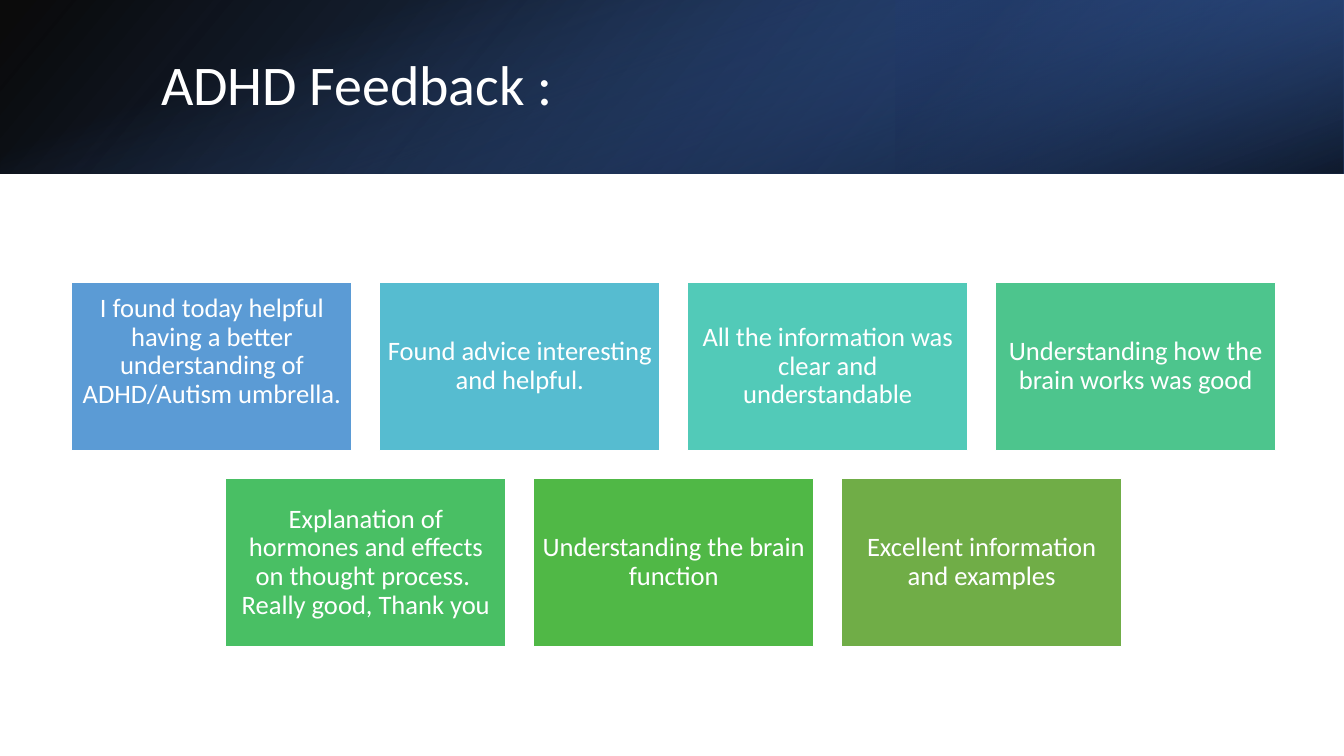
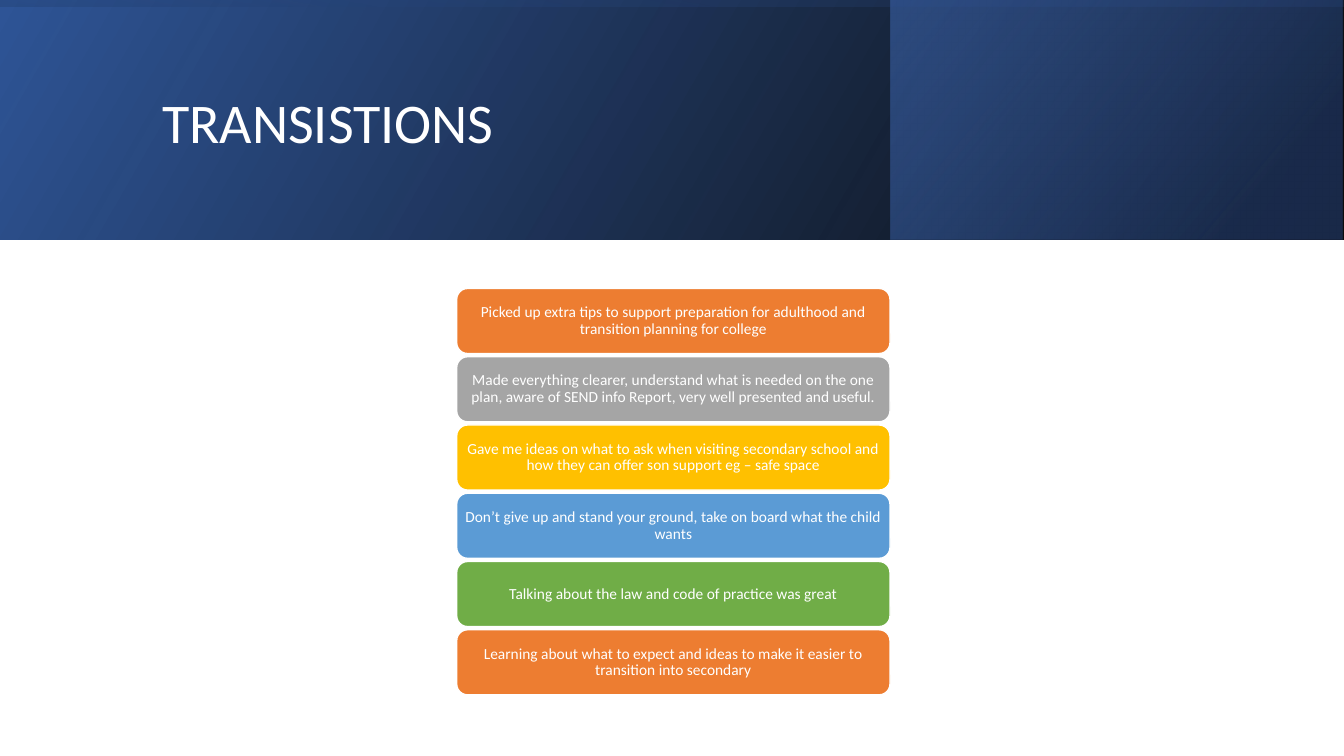
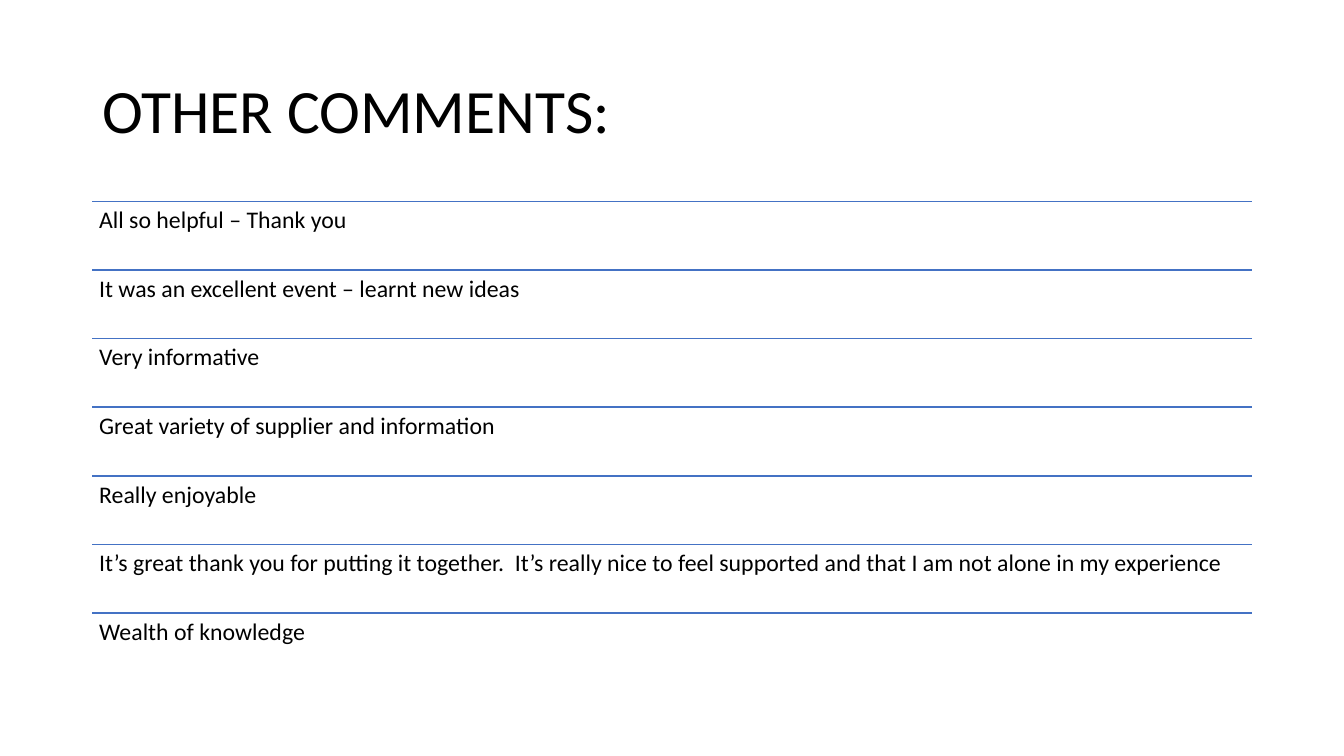
from pptx import Presentation
from pptx.dml.color import RGBColor
from pptx.enum.shapes import MSO_CONNECTOR, MSO_SHAPE
from pptx.enum.text import MSO_ANCHOR, PP_ALIGN
from pptx.oxml.ns import qn
from pptx.util import Cm, Pt
from lxml import etree

RECT = MSO_SHAPE.RECTANGLE
ROUND = MSO_SHAPE.ROUNDED_RECTANGLE
LINE = MSO_CONNECTOR.STRAIGHT
TOP, MIDDLE = MSO_ANCHOR.TOP, MSO_ANCHOR.MIDDLE
LEFT, CENTER = PP_ALIGN.LEFT, PP_ALIGN.CENTER

WIDE, HIGH = 33.87, 19.05
HUES = {
    "white": "FFFFFF", "black": "000000", "navy": "203864", "deep": "2F5597",
    "blue": "4472C4", "sky": "5B9BD5", "cyan": "56BCD0", "teal": "52CAB8",
    "mint": "4DC58D", "jade": "49BF64", "green": "50B846", "olive": "70AD47",
    "orange": "ED7D31", "gray": "A5A5A5", "gold": "FFC000",
}


def hue(name):
    return RGBColor.from_string(HUES[name])


class Deck:
    font = "Calibri"

    def __init__(self):
        self.prs = Presentation()
        self.prs.slide_width, self.prs.slide_height = Cm(WIDE), Cm(HIGH)
        self.slide = None

    def page(self):
        self.slide = self.prs.slides.add_slide(self.prs.slide_layouts[6])

    def label(self, shape, text, size, color, pads, align=LEFT, anchor=MIDDLE):
        frame = shape.text_frame
        frame.word_wrap = True
        frame.vertical_anchor = anchor
        (frame.margin_left, frame.margin_top,
         frame.margin_right, frame.margin_bottom) = map(Cm, pads)
        para = frame.paragraphs[0]
        para.alignment = align
        para.line_spacing = 0.9
        run = para.add_run()
        run.text = text
        run.font.name = self.font
        run.font.size = Pt(size)
        run.font.color.rgb = hue(color)

    def text(self, x, y, w, h, *style, **more):
        box = self.slide.shapes.add_textbox(Cm(x), Cm(y), Cm(w), Cm(h))
        self.label(box, *style, **more)

    def title(self, x, y, w, h, text, size=40, color="white"):
        self.text(x, y, w, h, text, size, color, (0.25, 0.13, 0.25, 0.13))

    def shape(self, kind, x, y, w, h):
        shape = self.slide.shapes.add_shape(kind, Cm(x), Cm(y), Cm(w), Cm(h))
        shape.shadow.inherit = False
        return shape

    def card(self, kind, x, y, w, h, fill, text, size, pads):
        card = self.shape(kind, x, y, w, h)
        card.fill.solid()
        card.fill.fore_color.rgb = hue(fill)
        card.line.color.rgb = hue("white")
        card.line.width = Pt(1)
        self.label(card, text, size, "white", pads, CENTER)

    def band(self, x, w, h, stops, angle, turn=0, flip=True):
        y = 0
        if turn % 180:
            x, y, w, h = x + (w - h) / 2, (h - w) / 2, h, w
        band = self.shape(RECT, x, y, w, h)
        band.rotation = turn
        band.line.fill.background()
        band.fill.gradient()
        band.fill.gradient_angle = 360 - angle
        props = band.element.spPr
        if flip:
            props.find(qn("a:xfrm")).set("flipH", "1")
        for stop, (place, color, _) in zip(band.fill.gradient_stops, stops):
            stop.position = place / 100
            stop.color.rgb = hue(color)
        for node, (_, _, alpha) in zip(props.iter(qn("a:srgbClr")), stops):
            etree.SubElement(node, qn("a:alpha")).set("val", str(alpha * 1000))

    def rule(self, x, y, w):
        rule = self.slide.shapes.add_connector(LINE, Cm(x), Cm(y), Cm(x + w), Cm(y))
        rule.line.color.rgb = hue("blue")
        rule.line.width = Pt(1)
        etree.SubElement(rule.element.spPr, qn("a:effectLst"))


BASE = [(0, "black", 96), (100, "deep", 100)]


def feedback(deck):
    deck.page()
    high = 4.37
    deck.band(0, WIDE, high, BASE, 140)
    deck.band(22.58, 11.29, high, [(19, "navy", 68), (100, "blue", 79)], 320, 180)
    deck.band(0, WIDE, high, [(23, "blue", 0), (99, "black", 74)], 340, 90, False)
    deck.title(3.81, 0.97, 27.89, 2.44, "ADHD Feedback :")
    pad = 0.19
    cards = [
        ("sky", "I found today helpful having a better understanding of ADHD/Autism umbrella.", 0.92),
        ("cyan", "Found advice interesting and helpful.", pad),
        ("teal", "All the information was clear and understandable", pad),
        ("mint", "Understanding how the brain works was good", pad),
        ("jade", "Explanation of hormones and effects on thought process.  Really good, Thank you", pad),
        ("green", "Understanding the brain function", pad),
        ("olive", "Excellent information and examples", pad),
    ]
    step = 7.76
    for i, (fill, text, low) in enumerate(cards):
        row, col = divmod(i, 4)
        deck.card(RECT, 1.81 + (col + row / 2) * step, 7.12 + row * 4.94, 7.06, 4.23,
                  fill, text, 19, (pad, pad, pad, low))


def moves(deck):
    deck.page()
    high = 6.03
    deck.band(0, WIDE, high, BASE, 330)
    deck.band(22.45, 11.39, high, [(19, "navy", 68), (100, "blue", 48)], 320)
    deck.band(0, WIDE, high, [(23, "deep", 16), (99, "black", 45)], 350, 270)
    deck.title(3.84, 0.97, 27, 4.37, "TRANSISTIONS")
    cards = [
        ("orange", "Picked up extra tips to support preparation for adulthood and transition planning for college"),
        ("gray", "Made everything clearer, understand what is needed on the one plan, "
                 "aware of SEND info Report, very well presented and useful."),
        ("gold", "Gave me ideas on what to ask when visiting secondary school and "
                 "how they can offer son support eg – safe space"),
        ("sky", "Don’t give up and stand your ground, take on board what the child wants"),
        ("olive", "Talking about the law and code of practice was great"),
        ("orange", "Learning about what to expect and ideas to make it easier to transition into secondary"),
    ]
    for i, (fill, text) in enumerate(cards):
        deck.card(ROUND, 11.51, 7.27 + i * 1.72, 10.92, 1.64,
                  fill, text, 11, (0.12, 0.06, 0.12, 0.06))


def notes(deck):
    deck.page()
    left, wide, step = 2.33, 29.21, 1.73
    deck.title(left, 1.01, wide, 3.68, "OTHER COMMENTS:", 44, "black")
    lines = [
        "All so helpful – Thank you",
        "It was an excellent event – learnt new ideas",
        "Very informative",
        "Great variety of supplier and information",
        "Really enjoyable",
        "It’s great thank you for putting it together.  It’s really nice to feel supported "
        "and that I am not alone in my experience",
        "Wealth of knowledge",
    ]
    for i, text in enumerate(lines):
        y = 5.07 + i * step
        deck.rule(left, y, wide)
        deck.text(left, y, wide, step, text, 17, "black", (0.17,) * 4, anchor=TOP)


def main():
    deck = Deck()
    for build in (feedback, moves, notes):
        build(deck)
    deck.prs.save("out.pptx")


if __name__ == "__main__":
    main()
